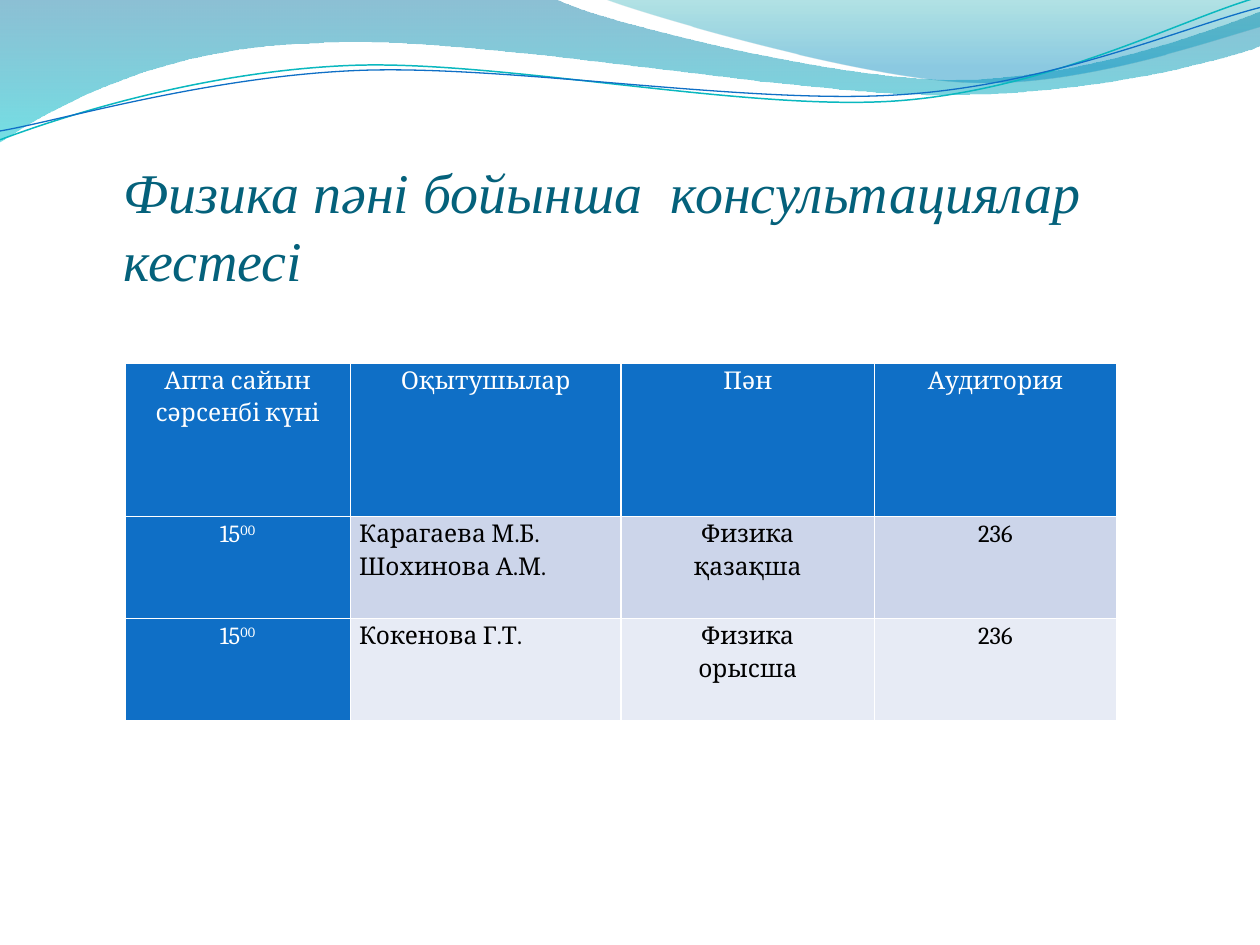
import math
import pptx
import pptx.util
import pptx.oxml
import pptx.oxml.ns
import pptx.dml.color
import pptx.enum.text
from lxml import etree

Inches, Pt = pptx.util.Inches, pptx.util.Pt
RGBColor = pptx.dml.color.RGBColor
qn = pptx.oxml.ns.qn
ALIGN = pptx.enum.text.PP_ALIGN

WHITE = RGBColor(0xFF, 0xFF, 0xFF)
BLACK = RGBColor(0, 0, 0)
BLUE = RGBColor(0x0F, 0x6F, 0xC6)
AQUA = RGBColor(0x0A, 0xB8, 0xBF)
TITLE_COLOR = RGBColor(0x04, 0x61, 0x7B)
BANDS = [RGBColor(0xCC, 0xD5, 0xEA), RGBColor(0xE7, 0xEB, 0xF5)]

TITLE = "Физика пәні бойынша  консультациялар кестесі"

# A caret starts a superscript, each list item is a paragraph
ROWS = [
    [["Апта сайын сәрсенбі күні"], ["Оқытушылар"], ["Пән"], ["Аудитория"]],
    [["15^00"], ["Карагаева М.Б.", "Шохинова А.М."], ["Физика", "қазақша"], ["236"]],
    [["15^00"], ["Кокенова Г.Т."], ["Физика", "орысша"], ["236"]],
]
COLUMN_WIDTHS = [1.79, 2.15, 2.01, 1.92]
ROW_HEIGHTS = [1.22, 0.81, 0.81]

# Outlines: a pair is a straight step, six numbers are a cubic curve
WAVE_BANDS = [
    ([(0, 0), (4.4, -0.01), (4.76, 0.17, 6.64, 0.63, 7.58, 0.63),
      (8.53, 0.63, 9.58, 0.26, 10, 0.09), (10.01, 0.36),
      (9.83, 0.44, 8.7, 0.76, 7.46, 0.75), (6.22, 0.75, 3.82, 0.28, 2.57, 0.34),
      (1.29, 0.36, 0.46, 0.83, -0.01, 1.13), (0, 0)],
     [(0, RGBColor(0x00, 0x74, 0xA1), 45), (1, RGBColor(0x00, 0xC6, 0xCF), 55)]),
    ([(4.79, -0.01), (5.09, 0.11, 6.82, 0.62, 7.69, 0.65),
      (8.56, 0.69, 9.61, 0.32, 10, 0.21), (10, 0), (4.79, -0.01)],
     [(0, RGBColor(0x00, 0xA1, 0xA9), 30), (0.8, RGBColor(0x00, 0x8B, 0xBF), 45)]),
]
WAVE_LINES = [
    ([(0, 1.11), (0.48, 0.93, 1.58, 0.57, 2.77, 0.52),
      (3.95, 0.47, 5.93, 0.89, 7.13, 0.8), (8.33, 0.71, 9.38, 0.15, 9.98, -0.02)],
     (4.99, 0.57), AQUA, 0.85),
    ([(0, 1.04), (0.47, 0.96, 1.64, 0.61, 2.83, 0.56),
      (4.03, 0.51, 5.97, 0.84, 7.17, 0.75), (8.36, 0.67, 9.41, 0.21, 10, 0.06)],
     (5, 0.59), BLUE, 0.75),
]
LINE_TILT = 2.7


def turn(step, center, degrees):
    """Turn every point of a step clockwise about the center."""
    cos, sin = math.cos(math.radians(degrees)), math.sin(math.radians(degrees))
    turned = []
    for x, y in zip(step[::2], step[1::2]):
        dx, dy = x - center[0], y - center[1]
        turned += [center[0] + dx * cos - dy * sin, center[1] + dx * sin + dy * cos]
    return tuple(turned)


def add_outline(page, outline, close):
    """Build the outline on its anchors, then bend the curved steps."""
    steps = [tuple(Inches(value) for value in step) for step in outline]
    builder = page.shapes.build_freeform(*steps[0], scale=1.0)
    builder.add_line_segments([step[-2:] for step in steps[1:]], close=close)
    shape = builder.convert_to_shape()
    shape.shadow.inherit = False
    segments = list(shape._element.spPr.iter(qn("a:lnTo")))
    for segment, step in zip(segments, steps[1:]):
        if len(step) == 6:
            curve = etree.Element(qn("a:cubicBezTo"))
            for x, y in zip(step[::2], step[1::2]):
                etree.SubElement(curve, qn("a:pt"),
                                 x=str(x - shape.left), y=str(y - shape.top))
            segment.getparent().replace(segment, curve)
    return shape


def add_wave(page):
    for outline, stops in WAVE_BANDS:
        band = add_outline(page, outline, True)
        band.line.fill.background()
        band.fill.gradient()
        band.fill.gradient_angle = 270
        for stop, (position, color, _) in zip(band.fill.gradient_stops, stops):
            stop.position = position
            stop.color.rgb = color
        colors = list(band._element.spPr.iter(qn("a:srgbClr")))
        for color, (_, _, opacity) in zip(colors, stops):
            etree.SubElement(color, qn("a:alpha"), val=str(opacity * 1000))
    for outline, center, color, width in WAVE_LINES:
        level = [turn(step, center, LINE_TILT) for step in outline]
        line = add_outline(page, level, False)
        line.rotation = 360 - LINE_TILT
        line.fill.background()
        line.line.color.rgb = color
        line.line.width = Pt(width)


def add_span(para, text, font, size, color):
    span = para.add_run()
    span.text = text
    span.font.name, span.font.size = font, Pt(size)
    span.font.color.rgb = color
    return span


def add_title(page):
    box = page.shapes.add_textbox(Inches(0.98), Inches(1.07), Inches(8.19), Inches(1.25))
    frame = box.text_frame
    frame.word_wrap = True
    frame.vertical_anchor = pptx.enum.text.MSO_ANCHOR.BOTTOM
    frame.margin_left = frame.margin_right = frame.margin_bottom = 0
    frame.margin_top = Inches(0.05)
    span = add_span(frame.paragraphs[0], TITLE, "Times New Roman", 32, TITLE_COLOR)
    span.font.italic = True


def set_borders(cell):
    properties = cell._tc.get_or_add_tcPr()
    for side in ("a:lnL", "a:lnR", "a:lnT", "a:lnB"):
        border = etree.SubElement(properties, qn(side), w=str(Pt(1)))
        fill = etree.SubElement(border, qn("a:solidFill"))
        etree.SubElement(fill, qn("a:srgbClr"), val=str(WHITE))


def fill_cell(cell, paragraphs, row, column):
    is_heading = row == 0 or column == 0
    set_borders(cell)
    cell.fill.solid()
    cell.fill.fore_color.rgb = BLUE if is_heading else BANDS[row - 1]
    cell.margin_left = cell.margin_right = Inches(0.07)
    cell.margin_top = cell.margin_bottom = 0
    frame = cell.text_frame
    for i, text in enumerate(paragraphs):
        para = frame.add_paragraph() if i else frame.paragraphs[0]
        para.alignment = ALIGN.LEFT if row and column == 1 else ALIGN.CENTER
        para.line_spacing = 1.15
        for level, part in enumerate(text.split("^")):
            span = add_span(para, part, "Cambria", 14, WHITE if is_heading else BLACK)
            if level:
                span.font._element.set("baseline", "30000")


def add_schedule(page):
    table = page.shapes.add_table(
        len(ROWS), len(COLUMN_WIDTHS), Inches(0.99), Inches(2.88),
        Inches(sum(COLUMN_WIDTHS)), Inches(sum(ROW_HEIGHTS))).table
    for column, width in zip(table.columns, COLUMN_WIDTHS):
        column.width = Inches(width)
    for row, height in zip(table.rows, ROW_HEIGHTS):
        row.height = Inches(height)
    for r, cells in enumerate(ROWS):
        for c, paragraphs in enumerate(cells):
            fill_cell(table.cell(r, c), paragraphs, r, c)


def main():
    deck = pptx.Presentation()
    deck.slide_width, deck.slide_height = Inches(10), Inches(7.5)
    page = deck.slides.add_slide(deck.slide_layouts[6])
    add_wave(page)
    add_title(page)
    add_schedule(page)
    deck.save("out.pptx")


if __name__ == "__main__":
    main()
